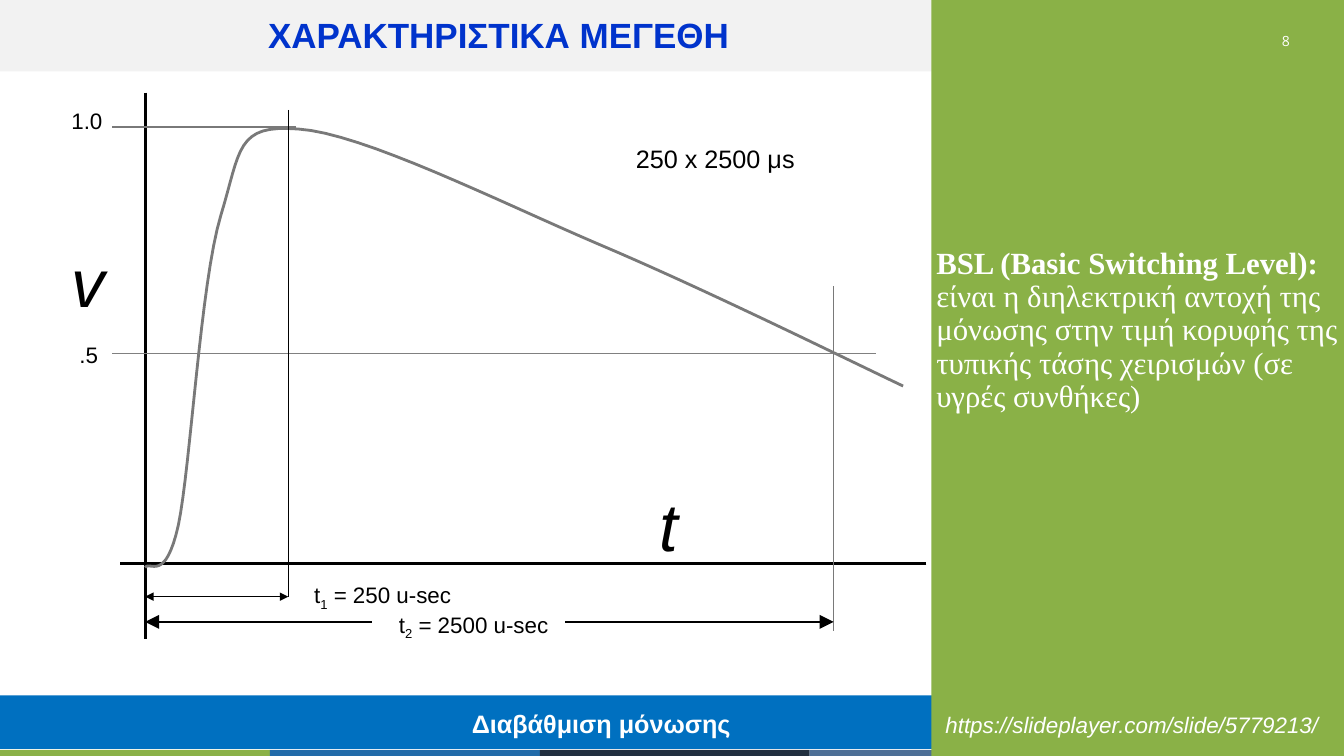
from lxml import etree
from pptx import Presentation
from pptx.dml.color import RGBColor
from pptx.enum.shapes import MSO_CONNECTOR, MSO_SHAPE
from pptx.enum.text import MSO_ANCHOR, PP_ALIGN
from pptx.oxml.ns import qn
from pptx.util import Pt

RECTANGLE = MSO_SHAPE.RECTANGLE
STRAIGHT = MSO_CONNECTOR.STRAIGHT
TOP, MIDDLE, BOTTOM = MSO_ANCHOR.TOP, MSO_ANCHOR.MIDDLE, MSO_ANCHOR.BOTTOM
LEFT, CENTER = PP_ALIGN.LEFT, PP_ALIGN.CENTER

COLORS = {
    "white": "FFFFFF", "black": "000000", "header": "F2F2F2",
    "green": "8AB147", "bar": "0070C0", "title": "0033CC",
    "blue": "216BA9", "navy": "212F3F", "slate": "4D6F96",
    "curve": "797979", "half": "808080",
}
WIDTH, HEIGHT = 960, 540
PANEL_LEFT = 665.3


def color(name):
    return RGBColor.from_string(COLORS[name])


class SlideBuilder:
    """Draws elements on one slide; all lengths are in points."""

    def __init__(self, slide, font="Arial"):
        self.slide = slide
        self.font = font

    def box(self, left, top, width, height, fill):
        shape = self.slide.shapes.add_shape(
            RECTANGLE, Pt(left), Pt(top), Pt(width), Pt(height))
        shape.shadow.inherit = False
        shape.fill.solid()
        shape.fill.fore_color.rgb = color(fill)
        shape.line.fill.background()

    def text(self, left, top, width, height, parts, size, fill="black",
             font=None, bold=False, italic=False, align=LEFT, anchor=TOP,
             insets=(7.2, 3.6, 7.2, 3.6), wrap=True):
        """Add a text box; returns its paragraph and runs."""
        shape = self.slide.shapes.add_textbox(
            Pt(left), Pt(top), Pt(width), Pt(height))
        frame = shape.text_frame
        frame.word_wrap = wrap
        frame.vertical_anchor = anchor
        (frame.margin_left, frame.margin_top,
         frame.margin_right, frame.margin_bottom) = map(Pt, insets)
        paragraph = frame.paragraphs[0]
        paragraph.alignment = align
        for part in parts:
            run = paragraph.add_run()
            run.text = part
            run.font.name = font or self.font
            run.font.size = Pt(size)
            run.font.bold = bold
            run.font.italic = italic
            run.font.color.rgb = color(fill)
        return paragraph, paragraph.runs

    def duration(self, left, top, index, value):
        """Add a time label with a subscript index."""
        _, runs = self.text(left, top, 144, 26.6,
                            ["t", index, f" = {value} u-sec"], 16)
        runs[1].font._element.set("baseline", "-25000")

    def line(self, start, end, weight, stroke="black", arrows=(), arrow_size="med"):
        connector = self.slide.shapes.add_connector(
            STRAIGHT, Pt(start[0]), Pt(start[1]), Pt(end[0]), Pt(end[1]))
        connector.line.color.rgb = color(stroke)
        connector.line.width = Pt(weight)
        outline = connector.line._get_or_add_ln()
        for arrow in arrows:
            etree.SubElement(outline, qn(f"a:{arrow}"), type="triangle",
                             w=arrow_size, len=arrow_size)
        etree.SubElement(connector._element.spPr, qn("a:effectLst"))

    def curve(self, start, segments, weight, stroke, steps=16):
        """Draw a chain of cubic Bezier segments as one open outline."""
        points = []
        current = start
        for first, second, end in segments:
            for step in range(1, steps + 1):
                t = step / steps
                u = 1 - t
                points.append(tuple(
                    Pt(u**3 * a + 3 * u * u * t * b + 3 * u * t * t * c + t**3 * d)
                    for a, b, c, d in zip(current, first, second, end)))
            current = end
        builder = self.slide.shapes.build_freeform(Pt(start[0]), Pt(start[1]))
        builder.add_line_segments(points, close=False)
        shape = builder.convert_to_shape()
        shape.shadow.inherit = False
        shape.fill.background()
        shape.line.color.rgb = color(stroke)
        shape.line.width = Pt(weight)


def main():
    presentation = Presentation()
    presentation.slide_width = Pt(WIDTH)
    presentation.slide_height = Pt(HEIGHT)
    builder = SlideBuilder(
        presentation.slides.add_slide(presentation.slide_layouts[6]))

    # Footer strip, footer bar and header
    strip_width = 192.8
    for index, name in enumerate(("green", "blue", "navy", "slate")):
        builder.box(index * strip_width, 535.7, strip_width, 4.3, name)
    builder.box(0, 496.8, WIDTH, 38.2, "bar")
    builder.text(57.6, 504, 743.8, 26, ["Διαβάθμιση μόνωσης"], 18, "white",
                 bold=True, align=CENTER, anchor=MIDDLE,
                 insets=(3.6, 1.4, 3.6, 1.4))
    builder.box(0, 0, WIDTH, 51, "header")

    # Side panel
    builder.box(PANEL_LEFT, 0, WIDTH - PANEL_LEFT, HEIGHT, "green")
    builder.text(902.2, 8.6, 32.4, 41, ["8"], 10, "white", font="Open Sans",
                 align=CENTER, anchor=MIDDLE, insets=(0, 14.4, 0, 14.4))
    builder.text(50.4, 5.8, 611.3, 37.4, ["ΧΑΡΑΚΤΗΡΙΣΤΙΚΑ ΜΕΓΕΘΗ"], 25, "title",
                 bold=True, align=CENTER, anchor=BOTTOM)
    paragraph, runs = builder.text(
        661.7, 173.5, 298.3, 127.4,
        ["BSL (Basic Switching Level): ",
         "είναι η διηλεκτρική αντοχή της μόνωσης στην τιμή κορυφής της "
         "τυπικής τάσης χειρισμών (σε υγρές συνθήκες)"],
        22, "white", font="Times New Roman", insets=(7.2, 3.6, 2.5, 3.6))
    paragraph.line_spacing = 0.9
    runs[0].font.bold = True

    # Axes and impulse curve
    axis_x, axis_y = 103.7, 402.5
    peak_x, half_x = 205.9, 595.4
    builder.line((axis_x, 66.2), (axis_x, 456.5), 2.25)
    builder.line((661.7, axis_y), (85.7, axis_y), 2.25)
    builder.curve((axis_x, 405.4), [
        ((107.3, 400.3), (118.1, 416.9), (127.4, 375.1)),
        ((136.1, 333.4), (143.3, 201.6), (157.7, 154.1)),
        ((172.1, 106.6), (168.5, 88.6), (213.1, 92.2)),
        ((258.5, 95), (355, 143.3), (427, 174.2)),
        ((499, 204.5), (599.8, 254.2), (645.1, 275.8)),
    ], 2, "curve")

    # Voltage levels
    level_left = 79.9
    builder.text(43.9, 72.7, 41.8, 26.6, ["1.0"], 16)
    builder.line((211.7, 90.7), (level_left, 90.7), 1, "curve")
    builder.line((625.7, 252.7), (level_left, 252.7), 0.5, "half")
    builder.text(49.7, 240.5, 36, 26.6, [".5"], 16)

    # Times to peak and to half value
    t1_y, t2_y = 426.2, 444.2
    builder.line((half_x, 204.5), (half_x, 450.7), 1, "curve")
    builder.duration(277.9, 432.7, "2", 2500)
    for start_x, end_x in ((265.7, axis_x), (403.9, half_x)):
        builder.line((start_x, t2_y), (end_x, t2_y), 1,
                     arrows=("tailEnd",), arrow_size="lg")
    builder.line((peak_x, 78.5), (peak_x, t1_y), 1)
    builder.duration(217.4, 411.8, "1", 250)
    builder.line((peak_x, t1_y), (axis_x, t1_y), 1,
                 arrows=("headEnd", "tailEnd"))

    # Axis names, impulse shape and reference
    builder.text(43.9, 168.5, 36, 64.8, ["v"], 48, italic=True, wrap=False)
    builder.text(463.7, 342.7, 28.1, 64.8, ["t"], 48, italic=True)
    builder.text(447.1, 98.6, 128.9, 28.8, ["250 x 2500 μs"], 18, wrap=False)
    builder.text(668.2, 504.7, 284.4, 26.6,
                 ["https://slideplayer.com/slide/5779213/"], 16, "white",
                 italic=True, wrap=False)

    presentation.save("out.pptx")


if __name__ == "__main__":
    main()
